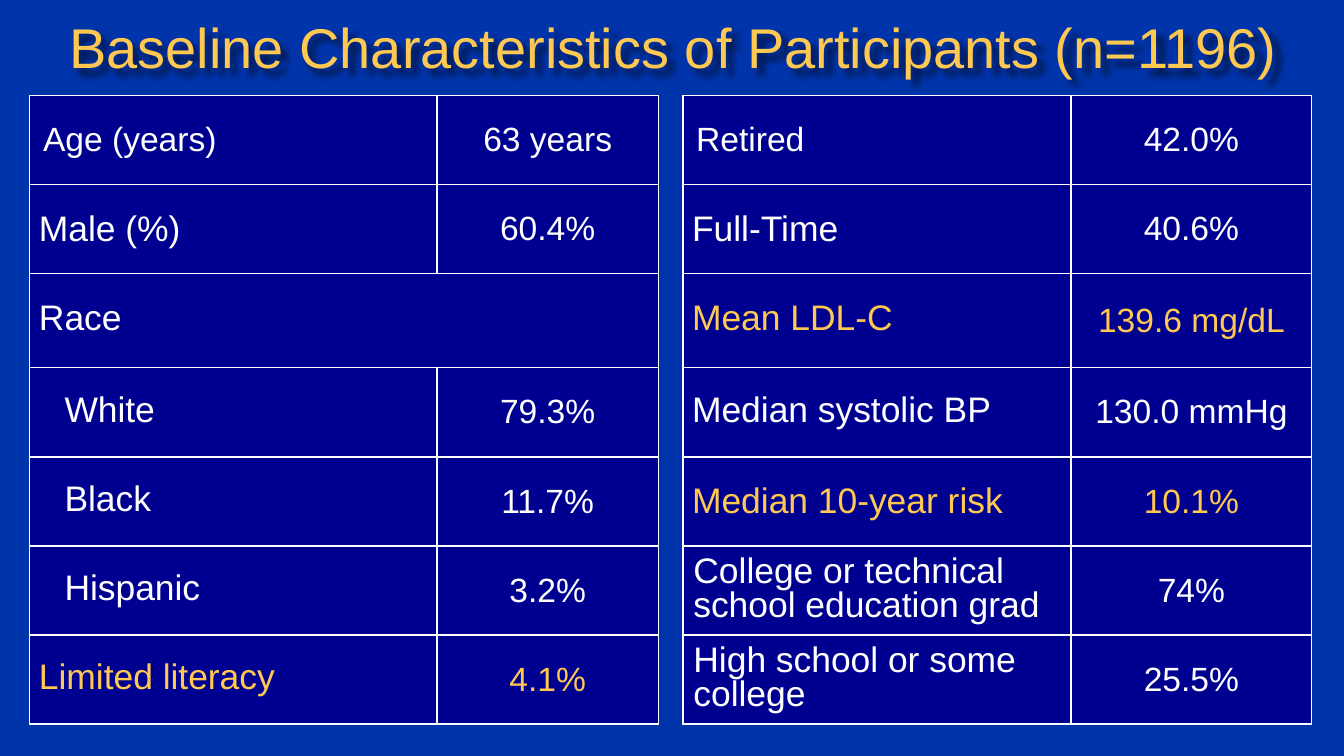
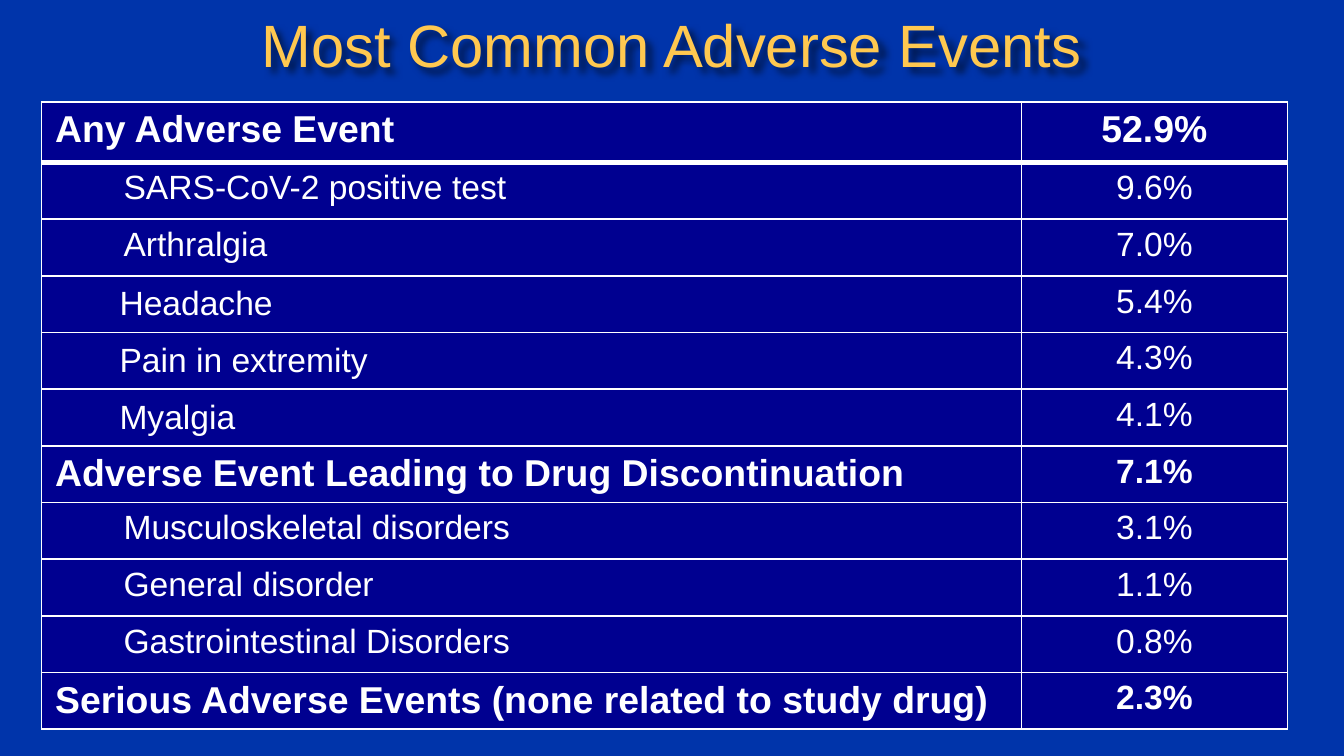
from dataclasses import dataclass

from lxml import etree
from pptx import Presentation
from pptx import util as u
from pptx.dml.color import RGBColor
from pptx.enum import text
from pptx.oxml import ns

COLORS = {"background": "0034AA", "cell": "000090", "text": "FFFFFF",
          "accent": "FFC850", "shadow": "000000"}
FONT = "Arial"
INSETS = {"wide": (0.1, 0.05), "tight": (0.07, 0), "even": (0.05, 0.05)}
SIDES = {"lnL": "left", "lnR": "right", "lnT": "top", "lnB": "bottom"}


@dataclass
class Entry:
    words: str
    size: int = 18
    color: str = "text"
    bold: bool = False
    centered: bool = False
    indent: float = 0
    spacing: float | None = None
    inset: str = "tight"
    middle: bool = True


class Deck:
    def __init__(self, width, height):
        self.presentation = Presentation()
        self.presentation.slide_width = u.Inches(width)
        self.presentation.slide_height = u.Inches(height)
        self.slide = None

    def rgb(self, name):
        return RGBColor.from_string(COLORS[name])

    def add_slide(self):
        self.slide = self.presentation.slides.add_slide(self.presentation.slide_layouts[5])
        fill = self.slide.background.fill
        fill.solid()
        fill.fore_color.rgb = self.rgb("background")

    def add_run(self, paragraph, words, size, color, bold=False):
        run = paragraph.add_run()
        run.text = words
        run.font.name = FONT
        run.font.size = u.Pt(size)
        run.font.bold = bold
        run.font.color.rgb = self.rgb(color)

    def add_title(self, words, left, width, height, size):
        title = self.slide.shapes.title
        title.left, title.top = u.Inches(left), u.Inches(0)
        title.width, title.height = u.Inches(width), u.Inches(height)
        title.fill.background()
        self.add_shadow(title)
        frame = title.text_frame
        frame.word_wrap = True
        frame.auto_size = text.MSO_AUTO_SIZE.NONE
        frame.vertical_anchor = text.MSO_ANCHOR.MIDDLE
        paragraph = frame.paragraphs[0]
        paragraph.alignment = text.PP_ALIGN.CENTER
        self.add_run(paragraph, words, size, "accent")

    def add_shadow(self, shape):
        effects = etree.SubElement(shape._element.spPr, ns.qn("a:effectLst"))
        shadow = etree.SubElement(effects, ns.qn("a:outerShdw"), blurRad="50800",
                                  dist="50800", dir="2700000", algn="tl")
        color = etree.SubElement(shadow, ns.qn("a:srgbClr"), val=COLORS["shadow"])
        etree.SubElement(color, ns.qn("a:alpha"), val="60000")

    def add_borders(self, cell, heavy_sides):
        properties = cell._tc.get_or_add_tcPr()
        for tag, side in SIDES.items():
            weight = u.Pt(3 if side in heavy_sides else 1)
            line = etree.SubElement(properties, ns.qn(f"a:{tag}"), w=str(weight))
            fill = etree.SubElement(line, ns.qn("a:solidFill"))
            etree.SubElement(fill, ns.qn("a:srgbClr"), val=COLORS["text"])

    def style_cell(self, cell, heavy_sides=()):
        self.add_borders(cell, heavy_sides)
        cell.fill.solid()
        cell.fill.fore_color.rgb = self.rgb("cell")

    def fill_cell(self, cell, entry):
        side, end = INSETS[entry.inset]
        cell.margin_left = cell.margin_right = u.Inches(side)
        cell.margin_top = cell.margin_bottom = u.Inches(end)
        cell.vertical_anchor = text.MSO_ANCHOR.MIDDLE if entry.middle else text.MSO_ANCHOR.TOP
        paragraph = cell.text_frame.paragraphs[0]
        paragraph.alignment = text.PP_ALIGN.CENTER if entry.centered else text.PP_ALIGN.LEFT
        if entry.spacing:
            paragraph.line_spacing = entry.spacing
        if entry.indent:
            properties = paragraph._p.get_or_add_pPr()
            properties.set("marL", str(u.Inches(entry.indent)))
            properties.set("indent", "0")
        self.add_run(paragraph, entry.words, entry.size, entry.color, entry.bold)

    def add_table(self, left, top, widths, heights, rows, heavy_rule=None):
        frame = self.slide.shapes.add_table(
            len(rows), len(widths), u.Inches(left), u.Inches(top),
            u.Inches(sum(widths)), u.Inches(sum(heights)))
        table = frame.table
        table.first_row = table.horz_banding = False
        for column, width in zip(table.columns, widths):
            column.width = u.Inches(width)
        for index, (row, height) in enumerate(zip(rows, heights)):
            table.rows[index].height = u.Inches(height)
            heavy = ("bottom",) if index == heavy_rule else ()
            for position in range(len(widths)):
                self.style_cell(table.cell(index, position), heavy)
            if len(row) < len(widths):
                table.cell(index, 0).merge(table.cell(index, len(widths) - 1))
            for position, entry in enumerate(row):
                self.fill_cell(table.cell(index, position), entry)


def measure(label, value, color="text", indent=0, spacing=0.85, inset="tight"):
    return [Entry(label, 19, color, indent=indent, spacing=spacing),
            Entry(value, color=color, centered=True, inset=inset)]


def first_measure(label, value):
    return [Entry(label, inset="wide"), Entry(value, centered=True)]


def event_group(label, value, size=18):
    return [Entry(label, 20, bold=True, inset="wide", middle=False),
            Entry(value, size, bold=True, centered=True, inset="wide", middle=False)]


def event(label, value, middle=False):
    return [Entry(label, indent=0.51, inset="tight" if middle else "wide", middle=middle),
            Entry(value, centered=True, inset="wide", middle=False)]


def build_baseline(deck):
    deck.add_slide()
    deck.add_title("Baseline Characteristics of Participants (n=1196)", 0.01, 10, 0.69, 30)
    race_height = 0.7
    row_height = (4.68 - race_height) / 6
    heights = [row_height] * 2 + [race_height] + [row_height] * 4
    demographics = [
        first_measure("Age (years)", "63 years"),
        measure("Male (%)", "60.4%", spacing=None),
        [Entry("Race", 19, spacing=0.85)],
        measure("White", "79.3%", indent=0.19, inset="even"),
        measure("Black", "11.7%", indent=0.19, inset="even"),
        measure("Hispanic", "3.2%", indent=0.19),
        measure("Limited literacy", "4.1%", "accent"),
    ]
    clinical = [
        first_measure("Retired", "42.0%"),
        measure("Full-Time", "40.6%", spacing=None),
        measure("Mean LDL-C", "139.6 mg/dL", "accent"),
        measure("Median systolic BP", "130.0 mmHg", inset="even"),
        measure("Median 10-year risk", "10.1%", "accent", spacing=None),
        measure("College or technical school education grad", "74%", indent=0.01),
        measure("High school or some college", "25.5%", indent=0.01),
    ]
    deck.add_table(0.22, 0.71, [3.03, 1.65], heights, demographics)
    deck.add_table(5.08, 0.71, [2.89, 1.79], heights, clinical)


def build_adverse_events(deck):
    deck.add_slide()
    deck.add_title("Most Common Adverse Events", 0.75, 8.5, 0.65, 32)
    first_height = 0.45
    heights = [first_height] + [(4.67 - first_height) / 10] * 10
    events = [
        event_group("Any Adverse Event", "52.9%", 20),
        event("SARS-CoV-2 positive test", "9.6%"),
        event("Arthralgia\t", "7.0%"),
        event("Headache", "5.4%", middle=True),
        event("Pain in extremity", "4.3%", middle=True),
        event("Myalgia", "4.1%", middle=True),
        event_group("Adverse Event Leading to Drug Discontinuation", "7.1%"),
        event("Musculoskeletal disorders", "3.1%"),
        event("General disorder", "1.1%"),
        event("Gastrointestinal Disorders", "0.8%"),
        event_group("Serious Adverse Events (none related to study drug)", "2.3%"),
    ]
    deck.add_table(0.31, 0.76, [7.29, 1.98], heights, events, heavy_rule=0)


def main():
    deck = Deck(10, 10 * 9 / 16)
    build_baseline(deck)
    build_adverse_events(deck)
    deck.presentation.save("out.pptx")


if __name__ == "__main__":
    main()
